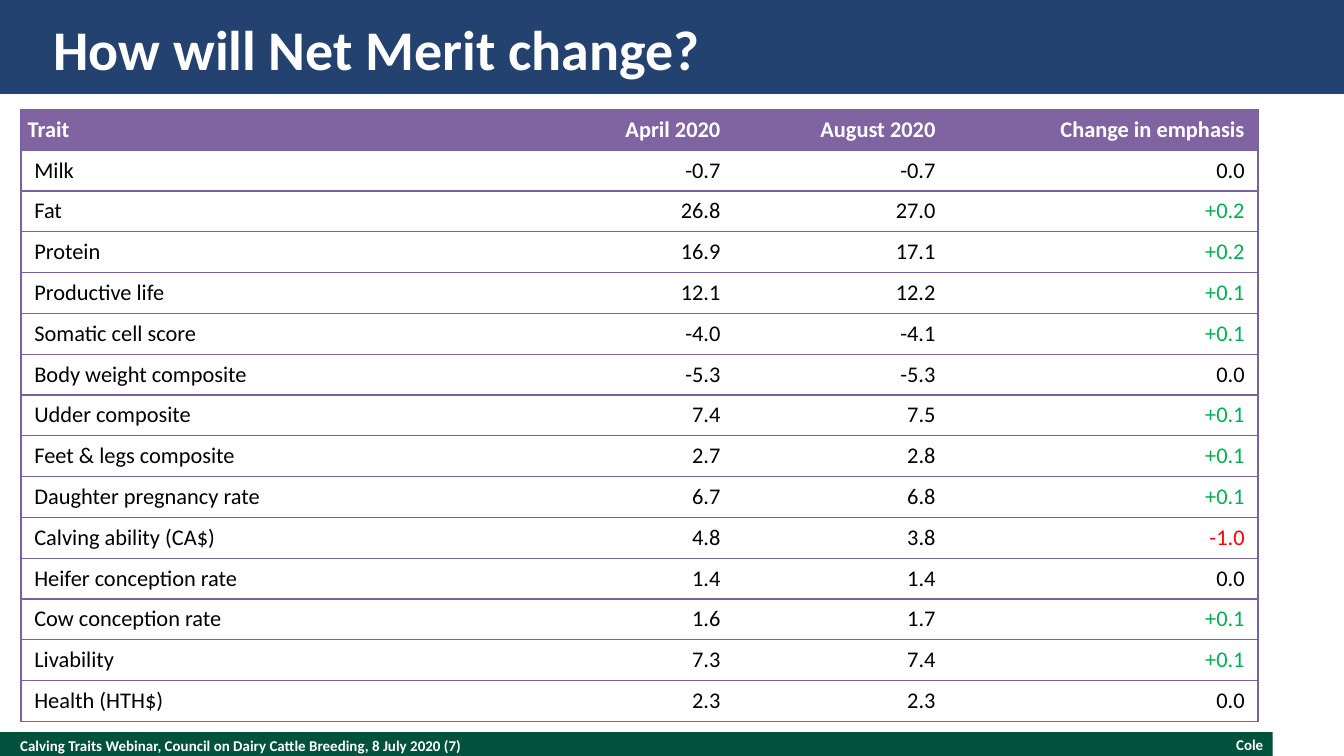
from lxml.etree import SubElement
from pptx import Presentation
from pptx.dml.color import RGBColor
from pptx.enum.shapes import MSO_SHAPE
from pptx.enum.text import MSO_ANCHOR, PP_ALIGN
from pptx.oxml.ns import qn
from pptx.util import Pt

FONT = "Calibri"
WHITE, BLACK, NAVY, GREEN = "FFFFFF", "000000", "244270", "00523C"
HEADER, BORDER, GAIN, LOSS = "8064A2", "7D60A0", "00B050", "FF0000"

COLUMN_WIDTHS = [276.2, 105.8, 115.2, 165.6]
HEADINGS = ["Trait", "April 2020", "August 2020", "Change in emphasis"]
TRAITS = [
    ("Milk", "-0.7", "-0.7", "0.0"),
    ("Fat", "26.8", "27.0", "+0.2"),
    ("Protein", "16.9", "17.1", "+0.2"),
    ("Productive life", "12.1", "12.2", "+0.1"),
    ("Somatic cell score", "-4.0", "-4.1", "+0.1"),
    ("Body weight composite", "-5.3", "-5.3", "0.0"),
    ("Udder composite", "7.4", "7.5", "+0.1"),
    ("Feet & legs composite", "2.7", "2.8", "+0.1"),
    ("Daughter pregnancy rate", "6.7", "6.8", "+0.1"),
    ("Calving ability (CA$)", "4.8", "3.8", "-1.0"),
    ("Heifer conception rate", "1.4", "1.4", "0.0"),
    ("Cow conception rate", "1.6", "1.7", "+0.1"),
    ("Livability", "7.3", "7.4", "+0.1"),
    ("Health (HTH$)", "2.3", "2.3", "0.0"),
]


def rgb(value):
    return RGBColor.from_string(value)


def write(tf, text, size, color, bold=False, align=PP_ALIGN.LEFT):
    p = tf.paragraphs[0]
    p.alignment = align
    r = p.add_run()
    r.text = text
    r.font.name = FONT
    r.font.size = Pt(size)
    r.font.bold = bold
    r.font.color.rgb = rgb(color)


def add_band(s, x, y, w, h, color):
    sp = s.shapes.add_shape(MSO_SHAPE.RECTANGLE, Pt(x), Pt(y), Pt(w), Pt(h))
    sp.shadow.inherit = False
    sp.fill.solid()
    sp.fill.fore_color.rgb = rgb(color)
    sp.line.fill.background()


def add_label(s, x, y, w, h, text, size, align=PP_ALIGN.LEFT):
    tf = s.shapes.add_textbox(Pt(x), Pt(y), Pt(w), Pt(h)).text_frame
    tf.word_wrap = True
    tf.vertical_anchor = MSO_ANCHOR.MIDDLE
    tf.margin_left = tf.margin_right = tf.margin_top = tf.margin_bottom = 0
    write(tf, text, size, WHITE, True, align)


def set_borders(cell, sides):
    """Draw the named sides (of L, R, T, B) and clear the others."""
    tc_pr = cell._tc.get_or_add_tcPr()
    for side in "LRTB":
        ln = SubElement(tc_pr, qn(f"a:ln{side}"), w=str(Pt(0.75)))
        if side in sides:
            fill = SubElement(ln, qn("a:solidFill"))
            SubElement(fill, qn("a:srgbClr"), val=BORDER)
        else:
            SubElement(ln, qn("a:noFill"))


def change_color(text):
    return {"+": GAIN, "-": LOSS}.get(text[0], BLACK)


def add_title(s, x, y, w, h):
    add_band(s, x, y, w, h, NAVY)
    add_label(s, x + 28.8, y + 7.2, w - 57.6, 37.4, "How will Net Merit change?", 30)


def add_footer(s, x, y, w, h):
    add_band(s, x, y, w, h, GREEN)
    add_label(s, x + 10.8, y, 468, h,
              "Calving Traits Webinar, Council on Dairy Cattle Breeding, 8 July 2020 (7)", 8)
    add_label(s, x + w - 163.4, y + 1.8, 158.4, 9.4, "Cole", 8, PP_ALIGN.RIGHT)


def add_trait_table(s, x, y, w, h):
    rows = [HEADINGS, *TRAITS]
    last = len(HEADINGS) - 1
    table = s.shapes.add_table(len(rows), len(HEADINGS), Pt(x), Pt(y), Pt(w), Pt(h)).table
    table.horz_banding = False
    for column, width in zip(table.columns, COLUMN_WIDTHS):
        column.width = Pt(width)
    for i, values in enumerate(rows):
        table.rows[i].height = Pt(h / len(rows))
        heading = i == 0
        for j, text in enumerate(values):
            cell = table.cell(i, j)
            cell.margin_left = Pt(3.6 if heading and j == 0 else 7.2)
            cell.margin_right = Pt(7.2)
            cell.margin_top = cell.margin_bottom = Pt(3.6)
            set_borders(cell, "TB" + "L" * (j == 0) + "R" * (j == last))
            cell.fill.solid()
            cell.fill.fore_color.rgb = rgb(HEADER if heading else WHITE)
            color = WHITE if heading else change_color(text) if j == last else BLACK
            write(cell.text_frame, text, 12, color, heading,
                  PP_ALIGN.RIGHT if j else PP_ALIGN.LEFT)


def main():
    prs = Presentation()
    prs.slide_width, prs.slide_height = Pt(720), Pt(405)
    s = prs.slides.add_slide(prs.slide_layouts[6])
    add_footer(s, 0, 392.2, 681.8, 14.4)
    add_title(s, 0, 0, 720, 50.4)
    add_trait_table(s, 11.2, 58.6, sum(COLUMN_WIDTHS), 327.9)
    prs.save("out.pptx")


if __name__ == "__main__":
    main()
